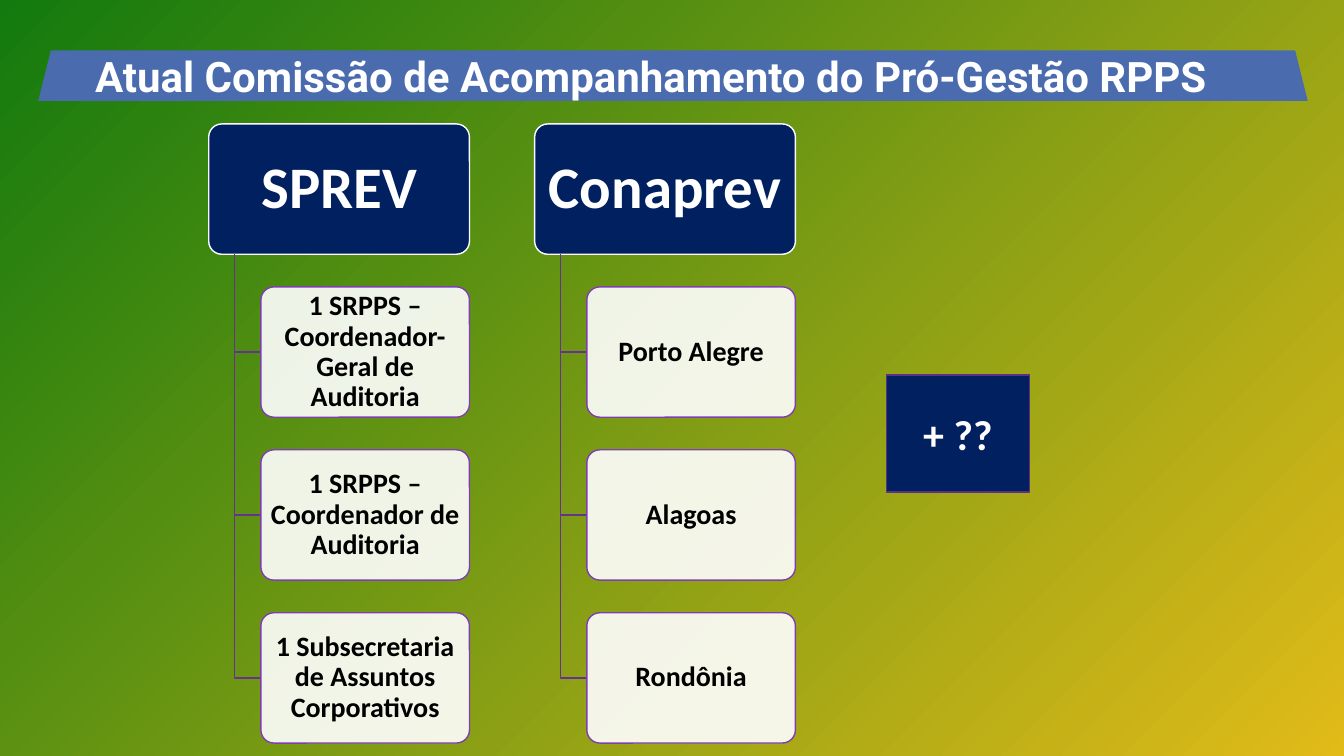
from lxml import etree
from pptx import Presentation
from pptx import util as u
from pptx.dml.color import RGBColor
from pptx.enum import shapes, text
from pptx.oxml.ns import qn

W, H = 13.33, 7.5
BOX = H / 5.8                      # height of every box in the hierarchy
LEFT, TOP = 2.07, 1.23             # corner of the hierarchy
COL, ROW = 2.5 * BOX, 1.25 * BOX   # steps between columns and rows
HEAD_W, INDENT, TRUNK = 2 * BOX, 0.4 * BOX, 0.2 * BOX

COLORS = {
    "green": "127A0E", "gold": "E2BB19", "band": "4A6CAE", "navy": "002060",
    "white": "FFFFFF", "black": "000000", "branch": "66328F",
    "item_line": "7F3EB2", "note_line": "5E2E84",
}

GROUPS = {
    "SPREV": ["1 SRPPS – Coordenador-Geral de Auditoria",
              "1 SRPPS – Coordenador de Auditoria",
              "1 Subsecretaria de Assuntos Corporativos"],
    "Conaprev": ["Porto Alegre", "Alagoas", "Rondônia"],
}


def rgb(name):
    return RGBColor.from_string(COLORS[name])


def set_background(slide):
    fill = slide.background.fill
    fill.gradient()
    fill.gradient_angle = 315
    for stop, name in zip(fill.gradient_stops, ("green", "gold")):
        stop.color.rgb = rgb(name)


def set_line(sp, name):
    sp.shadow.inherit = False
    if name:
        sp.line.color.rgb = rgb(name)
        sp.line.width = u.Pt(1)
    else:
        sp.line.fill.background()


def add_box(slide, kind, at, fill, line, adj=None, alpha=None):
    sp = slide.shapes.add_shape(kind, *[u.Inches(v) for v in at])
    sp.fill.solid()
    sp.fill.fore_color.rgb = rgb(fill)
    if alpha:
        clr = sp._element.spPr.find(qn("a:solidFill"))[0]
        etree.SubElement(clr, qn("a:alpha")).set("val", str(alpha * 1000))
    if adj:
        sp.adjustments[0] = adj
    set_line(sp, line)
    return sp


def write(sp, words, size, color, font="Calibri", insets=(0.1, 0.05),
          align=text.PP_ALIGN.CENTER, spacing=None):
    tf = sp.text_frame
    tf.text = words
    tf.word_wrap = True
    tf.vertical_anchor = text.MSO_ANCHOR.MIDDLE
    tf.margin_left = tf.margin_right = u.Inches(insets[0])
    tf.margin_top = tf.margin_bottom = u.Inches(insets[1])
    p = tf.paragraphs[0]
    p.alignment = align
    p.line_spacing = spacing
    r = p.runs[0]
    r.font.name, r.font.size, r.font.bold = font, u.Pt(size), True
    r.font.color.rgb = rgb(color)


def add_branch(slide, x, top, bottom):
    points = [(x, top), (x, bottom), (x + INDENT - TRUNK, bottom)]
    (start, *rest) = [(u.Inches(a), u.Inches(b)) for a, b in points]
    builder = slide.shapes.build_freeform(*start)
    builder.add_line_segments(rest, close=False)
    sp = builder.convert_to_shape()
    sp.fill.background()
    set_line(sp, "branch")


def add_group(slide, x, title, items):
    rounded = shapes.MSO_SHAPE.ROUNDED_RECTANGLE
    head = add_box(slide, rounded, (x, TOP, HEAD_W, BOX), "navy", "white", 0.1)
    write(head, title, 42, "white", insets=(0.1, 0.1), spacing=0.9)
    for row, item in enumerate(items, 1):
        y = TOP + row * ROW
        add_branch(slide, x + TRUNK, TOP + BOX, y + BOX / 2)
        sp = add_box(slide, rounded, (x + INDENT, y, HEAD_W - INDENT, BOX),
                     "white", "item_line", 0.1, alpha=90)
        write(sp, item, 20, "black", insets=(0.05, 0.03), spacing=0.9)


def main():
    prs = Presentation()
    prs.slide_width, prs.slide_height = u.Inches(W), u.Inches(H)
    slide = prs.slides.add_slide(prs.slide_layouts[6])
    set_background(slide)

    # Hierarchy columns
    for col, (title, items) in enumerate(GROUPS.items()):
        add_group(slide, LEFT + col * COL, title, items)

    # Title band
    band = add_box(slide, shapes.MSO_SHAPE.TRAPEZOID,
                   (0.38, 0.5, 12.59, 0.5), "band", None, 0.25)
    write(band, "Atual Comissão de Acompanhamento do Pró-Gestão RPPS", 30,
          "white", "Roboto", (0.48, 0), text.PP_ALIGN.LEFT)

    # Open question
    note = add_box(slide, shapes.MSO_SHAPE.RECTANGLE,
                   (8.79, 3.72, 1.42, 1.16), "navy", "note_line")
    write(note, "+ ??", 30, "white")

    prs.save("out.pptx")


if __name__ == "__main__":
    main()
